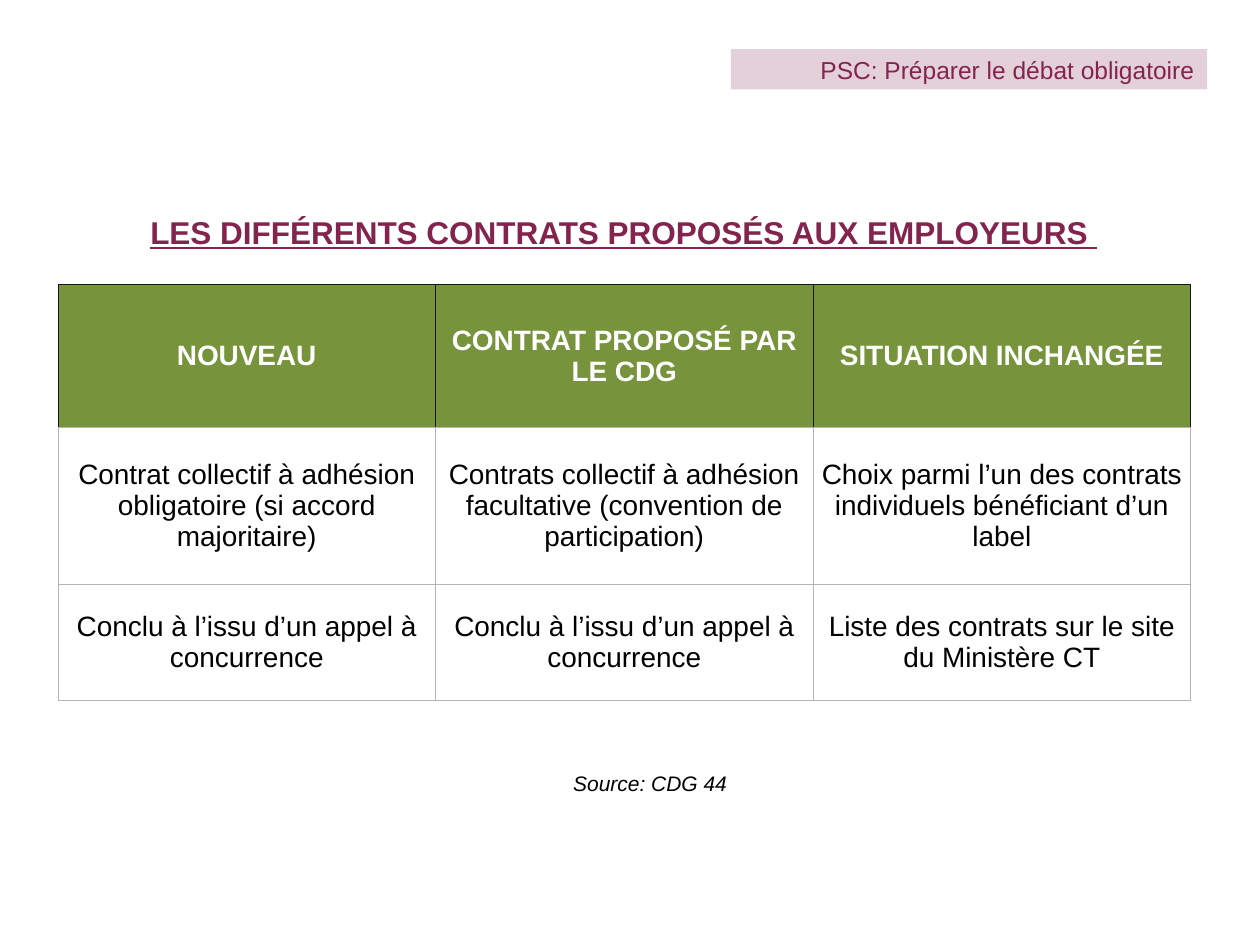
from lxml import etree
from pptx import Presentation, util as u
from pptx.dml.color import RGBColor
from pptx.enum import shapes, text
from pptx.oxml import ns

COLUMNS, ROWS = 100, 75
PLUM, GREEN, WHITE, BLACK = "83244E", "77933C", "FFFFFF", "000000"
DARK_RULE, PALE_RULE = "161616", "B4B4B4"
CENTER, RIGHT = text.PP_ALIGN.CENTER, text.PP_ALIGN.RIGHT
TOP, MIDDLE = text.MSO_ANCHOR.TOP, text.MSO_ANCHOR.MIDDLE

CONTRACTS = [
    ["NOUVEAU", "CONTRAT PROPOSÉ PAR LE CDG", "SITUATION INCHANGÉE"],
    ["Contrat collectif à adhésion obligatoire (si accord majoritaire)",
     "Contrats collectif à adhésion facultative (convention de participation)",
     "Choix parmi l’un des contrats individuels bénéficiant d’un label"],
    ["Conclu à l’issu d’un appel à concurrence",
     "Conclu à l’issu d’un appel à concurrence",
     "Liste des contrats sur le site du Ministère CT"],
]


def color(value):
    return RGBColor.from_string(value)


class Deck:
    font = "Arial"
    rule_width = 0.38

    def __init__(self, width, height):
        self.prs = Presentation()
        self.prs.slide_width, self.prs.slide_height = u.Inches(width), u.Inches(height)
        self.slide = self.prs.slides.add_slide(self.prs.slide_layouts[5])

    def box(self, column, row, columns, rows):
        """Turn grid units into left, top, width and height."""
        across = self.prs.slide_width / COLUMNS
        down = self.prs.slide_height / ROWS
        return [round(n) for n in
                (column * across, row * down, columns * across, rows * down)]

    def set_words(self, frame, words, size, ink, align=CENTER, anchor=TOP, **looks):
        frame.text = words
        frame.word_wrap = True
        frame.vertical_anchor = anchor
        line = frame.paragraphs[0]
        line.alignment = align
        font = line.runs[0].font
        font.name, font.size = self.font, u.Pt(size)
        font.color.rgb = color(ink)
        for look, value in looks.items():
            setattr(font, look, value)

    def title(self, words, *grid):
        heading = self.slide.shapes.title
        heading.left, heading.top, heading.width, heading.height = self.box(*grid)
        self.set_words(heading.text_frame, words, 18, PLUM, bold=True, underline=True)
        heading.text_frame.auto_size = text.MSO_AUTO_SIZE.NONE

    def banner(self, words, opacity, *grid):
        band = self.slide.shapes.add_shape(shapes.MSO_SHAPE.RECTANGLE, *self.box(*grid))
        band.shadow.inherit = False
        band.line.fill.background()
        band.fill.solid()
        band.fill.fore_color.rgb = color(PLUM)
        tint = band.fill._xPr.find(".//" + ns.qn("a:srgbClr"))
        etree.SubElement(tint, ns.qn("a:alpha"), val=str(opacity * 1000))
        self.set_words(band.text_frame, words, 14, PLUM, RIGHT, MIDDLE)

    def note(self, words, *grid):
        caption = self.slide.shapes.add_textbox(*self.box(*grid))
        self.set_words(caption.text_frame, words, 12, BLACK, italic=True)

    def borders(self, cell, **sides):
        """Rule the four sides, in the order L, R, T, B that the schema asks for."""
        properties = cell._tc.get_or_add_tcPr()
        for side, ink in sides.items():
            rule = etree.SubElement(properties, ns.qn("a:ln" + side),
                                    w=str(u.Pt(self.rule_width)))
            fill = etree.SubElement(rule, ns.qn("a:solidFill"))
            etree.SubElement(fill, ns.qn("a:srgbClr"), val=ink)

    def table(self, content, row_heights, *grid):
        area = self.box(*grid)
        table = self.slide.shapes.add_table(len(content), len(content[0]), *area).table
        table.horz_banding = False
        for row, height in zip(table.rows, row_heights):
            row.height = self.box(0, 0, 0, height)[3]
        for r, entries in enumerate(content):
            header = r == 0
            edge = DARK_RULE if header else PALE_RULE
            for c, words in enumerate(entries):
                cell = table.cell(r, c)
                self.borders(cell, L=edge, R=edge, T=edge, B=PALE_RULE)
                cell.fill.solid()
                cell.fill.fore_color.rgb = color(GREEN if header else WHITE)
                cell.margin_left = cell.margin_right = u.Inches(0.05)
                cell.margin_top = cell.margin_bottom = u.Inches(0.04)
                self.set_words(cell.text_frame, words, 16, WHITE if header else BLACK,
                               bold=header)
                cell.vertical_anchor = MIDDLE


def main():
    deck = Deck(10, 7.5)
    deck.note("Source: CDG 44", 6, 60.7, 91.2, 3)
    deck.table(CONTRACTS, [11.3, 12.5, 9.2], 4.6, 22.6, 89.9, 33)
    deck.title("LES DIFFÉRENTS CONTRATS PROPOSÉS AUX EMPLOYEURS ", 3.2, 16.4, 92.6, 8.2)
    deck.banner("PSC: Préparer le débat obligatoire", 21, 58, 3.9, 37.8, 3.2)
    deck.prs.save("out.pptx")


if __name__ == "__main__":
    main()
